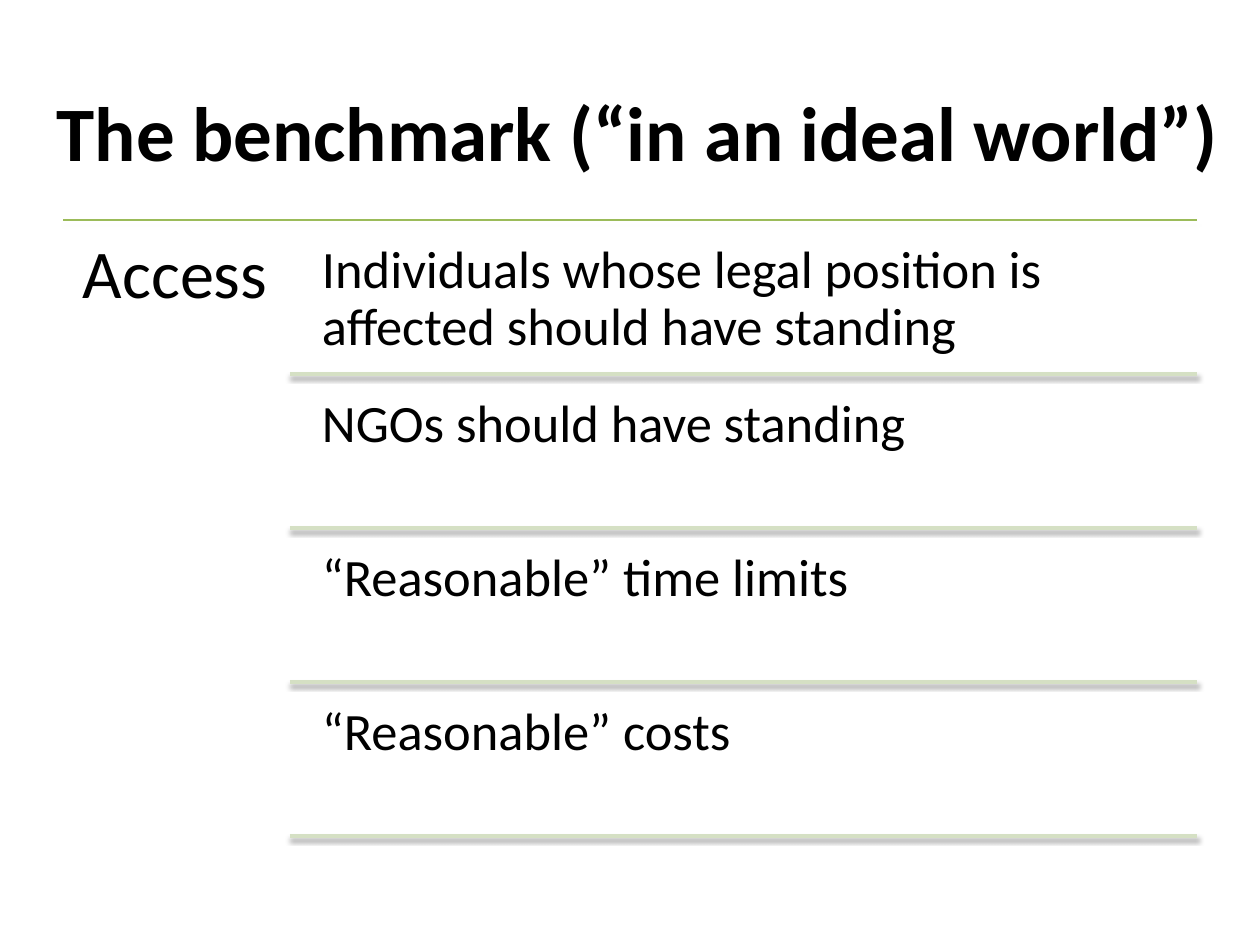
import pptx
import pptx.util
import pptx.dml.color
import pptx.enum.shapes
import pptx.enum.text
import pptx.oxml
import pptx.oxml.ns

SCALE = 914400 / 126
ROWS = [
    "Individuals whose legal position is affected should have standing",
    "NGOs should have standing",
    "“Reasonable” time limits",
    "“Reasonable” costs",
]
ROW_TOP, ROW_PITCH, ROW_HEIGHT = 228, 154, 146


def px(length):
    return pptx.util.Emu(round(length * SCALE))


def color(value):
    return pptx.dml.color.RGBColor.from_string(value)


deck = pptx.Presentation()
deck.slide_width, deck.slide_height = px(1260), px(945)
page = deck.slides.add_slide(deck.slide_layouts[5])

title = page.shapes.title
title.left, title.top, title.width, title.height = px(30), px(38), px(1216), px(186)
title.text_frame.vertical_anchor = pptx.enum.text.MSO_ANCHOR.MIDDLE
para = title.text_frame.paragraphs[0]
para.alignment = pptx.enum.text.PP_ALIGN.CENTER
span = para.add_run()
span.text = "The benchmark (“in an ideal world”)"
span.font.name = "Calibri"
span.font.size = pptx.util.Pt(44)
span.font.bold = True
span.font.color.rgb = color("000000")

rules = [(63, 220, "9BBB59", 0.75, 1.8, 35)]
texts = [("Access", 63, 220, 227, 624, 20, 39)]
for index, wording in enumerate(ROWS):
    top = ROW_TOP + index * ROW_PITCH
    texts.append((wording, 307, top, 891, ROW_HEIGHT, 15, 30))
    rules.append((290, top + ROW_HEIGHT, "D5E0C4", 2, 1.6, 38))

for left, top, line_color, weight, distance, opacity in rules:
    rule = page.shapes.add_connector(
        pptx.enum.shapes.MSO_CONNECTOR.STRAIGHT, px(left), px(top), px(1197), px(top)
    )
    rule.line.color.rgb = color(line_color)
    rule.line.width = pptx.util.Pt(weight)
    shadow = pptx.oxml.parse_xml(
        f'<a:effectLst {pptx.oxml.ns.nsdecls("a")}>'
        f'<a:outerShdw blurRad="{pptx.util.Pt(3.1)}" dist="{pptx.util.Pt(distance)}" '
        f'dir="5400000" rotWithShape="0"><a:srgbClr val="000000">'
        f'<a:alpha val="{opacity * 1000}"/></a:srgbClr></a:outerShdw></a:effectLst>'
    )
    rule._element.spPr.append(shadow)

for wording, left, top, width, height, inset, size in texts:
    box = page.shapes.add_textbox(px(left), px(top), px(width), px(height))
    frame = box.text_frame
    frame.word_wrap = True
    frame.margin_left = frame.margin_right = px(inset)
    frame.margin_top = frame.margin_bottom = px(inset)
    para = frame.paragraphs[0]
    para.line_spacing = 0.9
    span = para.add_run()
    span.text = wording
    span.font.name = "Calibri"
    span.font.size = pptx.util.Pt(size)
    span.font.color.rgb = color("000000")

deck.save("out.pptx")
